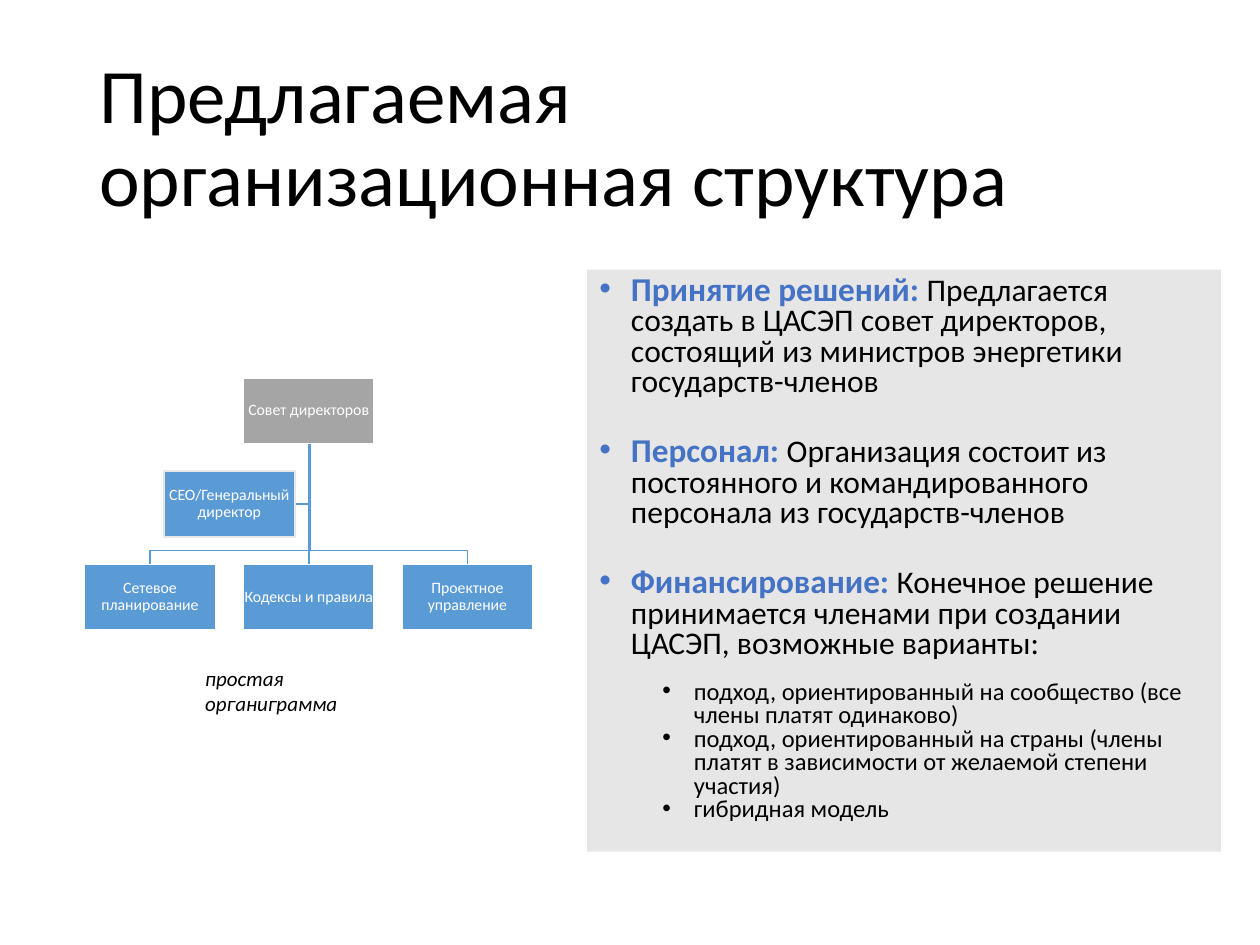
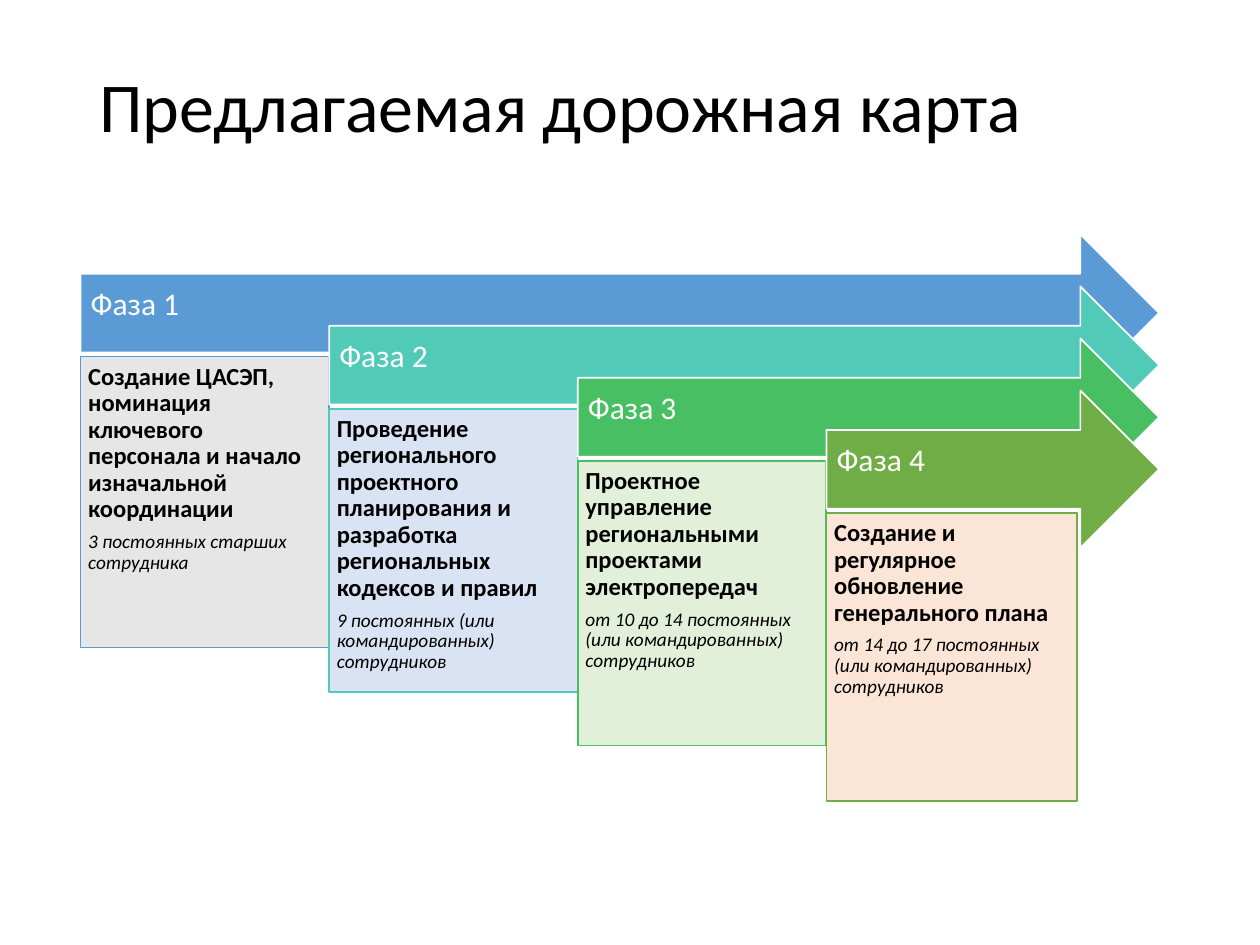
from pptx import Presentation
from pptx.dml.color import RGBColor
from pptx.enum.shapes import MSO_SHAPE as Shape
from pptx.enum.text import MSO_ANCHOR as Anchor, PP_ALIGN as Align
from pptx.oxml import parse_xml
from pptx.oxml.ns import nsdecls
from pptx.util import Inches, Pt

FONT = "Calibri"
BLACK, WHITE, GREY = "000000", "FFFFFF", "E7E6E6"
BLUE, ACCENT, SILVER = "5B9BD5", "4472C4", "A5A5A5"
NODE = (1.04, 0.52)

TOPICS = [
    ("Принятие решений: ",
     "Предлагается создать в ЦАСЭП совет директоров, состоящий из министров "
     "энергетики государств-членов"),
    ("Персонал: ",
     "Организация состоит из постоянного и командированного персонала из "
     "государств-членов"),
    ("Финансирование: ",
     "Конечное решение принимается членами при создании ЦАСЭП, возможные "
     "варианты:"),
]
OPTIONS = [
    "подход, ориентированный на сообщество (все члены платят одинаково)",
    "подход, ориентированный на страны (члены платят в зависимости от "
    "желаемой степени участия)",
    "гибридная модель",
]
TEAMS = ["Сетевое планирование", "Кодексы и правила", "Проектное управление"]
PHASES = [
    (BLUE, GREY, (1.97, 2.31),
     "Создание ЦАСЭП, номинация ключевого персонала и начало изначальной "
     "координации",
     "3 постоянных старших сотрудника"),
    ("52CAB8", "DAE3F3", (1.97, 2.25),
     "Проведение регионального проектного планирования и разработка "
     "региональных кодексов и правил",
     "9 постоянных (или командированных) сотрудников"),
    ("49BF64", "E2F0D9", (1.97, 2.26),
     "Проектное управление региональными проектами электропередач",
     "от 10 до 14 постоянных (или командированных) сотрудников"),
    ("70AD47", "FBE5D6", (1.99, 2.29),
     "Создание и регулярное обновление генерального плана",
     "от 14 до 17 постоянных (или командированных) сотрудников"),
]


def color(code):
    """Turn a hex string into a colour."""
    return RGBColor.from_string(code)


def write(para, text, size=18, fill=BLACK, bold=False, italic=False):
    """Add a run of text to a paragraph."""
    run = para.add_run()
    run.text = text
    font = run.font
    font.name, font.size, font.bold, font.italic = FONT, Pt(size), bold, italic
    font.color.rgb = color(fill)


def set_para(para, align=Align.LEFT, lead=0.9, before=0, after=0):
    """Set the alignment and spacing of a paragraph."""
    para.alignment, para.line_spacing = align, lead
    para.space_before, para.space_after = Pt(before), Pt(after)


def set_frame(shape, inset=(0.1, 0.05, 0.1, 0.05), anchor=Anchor.TOP):
    """Set wrap, insets and anchor, and return the text frame."""
    frame = shape.text_frame
    frame.word_wrap, frame.vertical_anchor = True, anchor
    (frame.margin_left, frame.margin_top,
     frame.margin_right, frame.margin_bottom) = map(Inches, inset)
    return frame


def add_box(slide, area, fill, line=None, kind=Shape.RECTANGLE):
    """Add a filled shape with an optional thin outline."""
    box = slide.shapes.add_shape(kind, *map(Inches, area))
    box.shadow.inherit = False
    box.fill.solid()
    box.fill.fore_color.rgb = color(fill)
    if line:
        box.line.color.rgb, box.line.width = color(line), Pt(1)
    else:
        box.line.fill.background()
    return box


def add_text(slide, area, text, lead=1, **style):
    """Add a text box with one paragraph."""
    box = slide.shapes.add_textbox(*map(Inches, area))
    para = set_frame(box).paragraphs[0]
    set_para(para, lead=lead)
    write(para, text, **style)


def add_title(slide, text, top, size):
    """Add the slide title."""
    add_text(slide, (0.69, top, 8.62, 0.94), text, lead=0.9, size=size)


def add_link(slide, *points):
    """Draw an open line through the given points."""
    start, *rest = [(Inches(x), Inches(y)) for x, y in points]
    pen = slide.shapes.build_freeform(*start)
    pen.add_line_segments(rest, close=False)
    link = pen.convert_to_shape()
    link.shadow.inherit = False
    link.fill.background()
    link.line.color.rgb, link.line.width = color(BLUE), Pt(1)


def add_node(slide, left, top, text, fill=BLUE, line=WHITE):
    """Add one box of the organisation chart."""
    box = add_box(slide, (left, top, *NODE), fill, line)
    para = set_frame(box, (0.01,) * 4, Anchor.MIDDLE).paragraphs[0]
    set_para(para, Align.CENTER)
    write(para, text, size=9, fill=WHITE)


def add_tree(slide):
    """Draw the organisation chart with its links behind the boxes."""
    wide, high = NODE
    top, mid, low = 3, 3.74, 4.48
    lefts = [0.67 + 1.26 * i for i in range(len(TEAMS))]
    trunk, base, bar = lefts[1] + wide / 2, top + high, low - 0.11
    aide = 1.3
    level = mid + high / 2
    add_link(slide, (trunk, base), (trunk, level), (aide + wide, level))
    for left in reversed(lefts):
        end = left + wide / 2
        stem = trunk + 0.01 if end < trunk else trunk
        if left == lefts[1]:
            add_link(slide, (stem, base), (stem, low))
        else:
            add_link(slide, (stem, base), (stem, bar), (end, bar), (end, low))
    add_node(slide, lefts[1], top, "Совет директоров", fill=SILVER)
    for left, team in zip(lefts, TEAMS):
        add_node(slide, left, low, team)
    add_node(slide, aide, mid, "СЕО/Генеральный директор", line="E7E7E7")


def add_bullet(para, indent, level=0):
    """Give a paragraph a hanging bullet."""
    para.level = level
    props = para._p.get_or_add_pPr()
    props.set("marL", str(Inches(indent)))
    props.set("indent", str(Inches(-0.25)))
    props.append(parse_xml(f'<a:buFont {nsdecls("a")} typeface="Arial"/>'))
    props.append(parse_xml(f'<a:buChar {nsdecls("a")} char="•"/>'))


def add_panel(slide):
    """Add the grey panel of topics and funding options."""
    frame = set_frame(add_box(slide, (4.66, 2.14, 5.03, 4.62), GREY))
    paras = [frame.paragraphs[0]]
    paras += [frame.add_paragraph() for _ in TOPICS[1:] + OPTIONS]
    for para, (head, body) in zip(paras, TOPICS):
        set_para(para, lead=0.8, before=10, after=12)
        add_bullet(para, 0.25)
        write(para, head, size=19, fill=ACCENT, bold=True)
        write(para, body)
    for para, text in zip(paras[len(TOPICS):], OPTIONS):
        set_para(para, lead=0.8)
        add_bullet(para, 0.75, level=1)
        write(para, text, size=14)


def add_phase(slide, rank, tint, pale, size, task, staff):
    """Add one phase arrow with its task card below."""
    left, top = 0.64 + 5.92 * rank / 3, 1.86 + 1.24 * rank / 3
    arrow = add_box(slide, (left, top, 9.2 - left, 1.25), tint, WHITE,
                    Shape.RIGHT_ARROW)
    para = set_frame(arrow, (0.08, 0.07, 0.28, 0.2),
                     Anchor.MIDDLE).paragraphs[0]
    set_para(para)
    write(para, f"Фаза {rank + 1}", fill=WHITE)
    card = add_box(slide, (left, top + 0.97, *size), pale, tint)
    frame = set_frame(card, (0.06,) * 4)
    first, last = frame.paragraphs[0], frame.add_paragraph()
    set_para(first, after=5)
    write(first, task, size=14, bold=True)
    set_para(last)
    write(last, staff, size=11, italic=True)


def main():
    """Build both slides and save the deck."""
    deck = Presentation()
    deck.slide_width, deck.slide_height = Inches(10), Inches(7.5)
    blank = deck.slide_layouts[6]

    slide = deck.slides.add_slide(blank)
    add_panel(slide)
    add_tree(slide)
    add_text(slide, (1.53, 5.23, 1.49, 0.5), "простая органиграмма",
             size=12, italic=True)
    add_title(slide, "Предлагаемая организационная структура", 0.4, 44)

    slide = deck.slides.add_slide(blank)
    for rank, phase in enumerate(PHASES):
        add_phase(slide, rank, *phase)
    add_title(slide, "Предлагаемая дорожная карта", 0.52, 40)

    deck.save("out.pptx")


if __name__ == "__main__":
    main()
